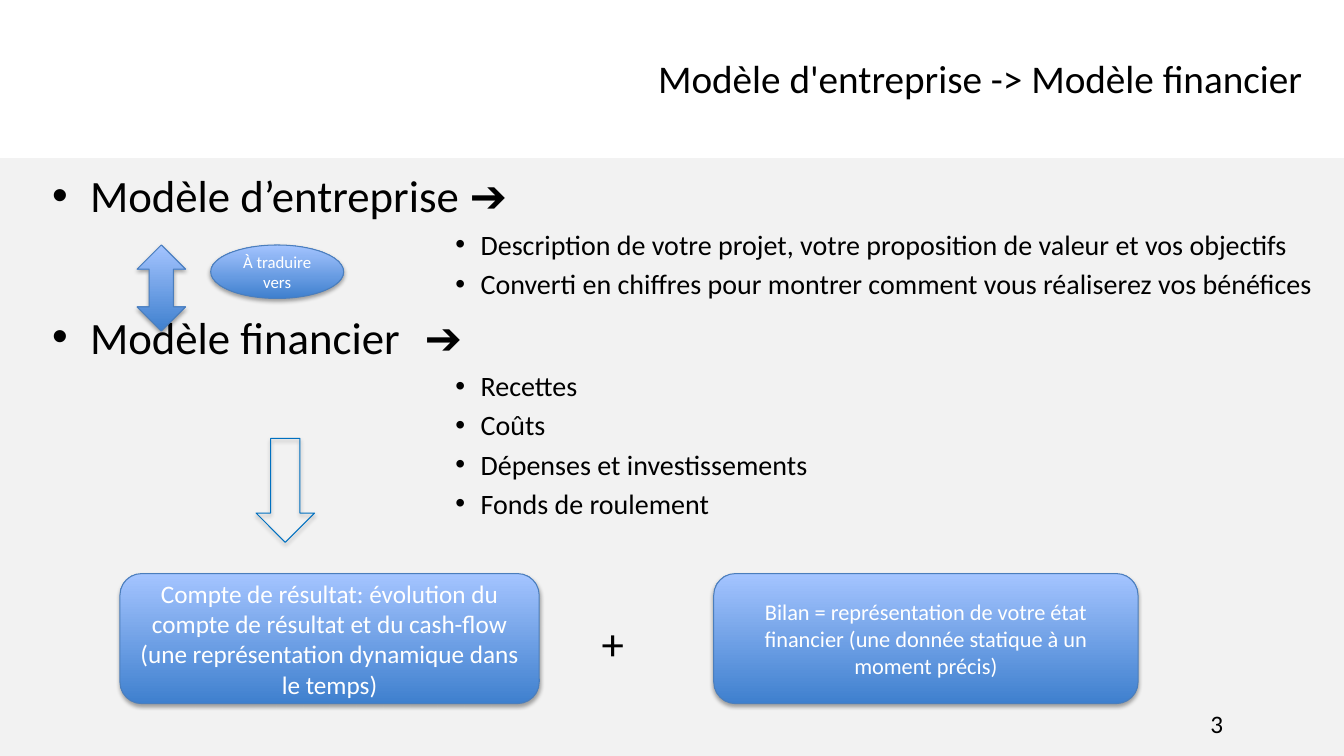
import lxml.etree
import pptx
import pptx.dml.color
import pptx.enum.shapes
import pptx.enum.text
import pptx.oxml.ns
import pptx.util

Pt = pptx.util.Pt
qn = pptx.oxml.ns.qn
SHAPE = pptx.enum.shapes.MSO_SHAPE
COLORS = {
    "panel": "F2F2F2",
    "text": "000000",
    "light_text": "FFFFFF",
    "gradient_bottom": "3F80CE",
    "gradient_top": "A4C4FF",
    "edge": "4B7EBC",
    "arrow_edge": "0070C0",
    "shadow": "000000",
}


def rgb(name):
    return pptx.dml.color.RGBColor.from_string(COLORS[name])


def add_run(paragraph, text, size, color="text"):
    run = paragraph.add_run()
    run.text = text
    run.font.name = "Calibri"
    run.font.size = Pt(size)
    run.font.color.rgb = rgb(color)


deck = pptx.Presentation()
deck.slide_width, deck.slide_height = Pt(960), Pt(540)
slide = deck.slides.add_slide(deck.slide_layouts[6])

# Grey panel below the title band
panel = slide.shapes.add_shape(SHAPE.RECTANGLE, 0, Pt(113), Pt(960), Pt(427))
panel.shadow.inherit = False
panel.fill.solid()
panel.fill.fore_color.rgb = rgb("panel")
panel.line.fill.background()

# Outline: text, level
outline = [
    ("Modèle d’entreprise ➔", "model"),
    ("Description de votre projet, votre proposition de valeur et vos objectifs", "detail"),
    ("Converti en chiffres pour montrer comment vous réaliserez vos bénéfices", "detail"),
    ("Modèle financier\t➔", "model"),
    ("Recettes", "detail"),
    ("Coûts", "detail"),
    ("Dépenses et investissements", "detail"),
    ("Fonds de roulement", "detail"),
]
# Level: size, left margin, hanging indent
levels = {"model": (32, 27, 27), "detail": (20, 306, 18)}
body = slide.shapes.add_textbox(Pt(30.2), Pt(116.6), Pt(929.8), Pt(414.7)).text_frame
body.word_wrap = True
for index, (text, level) in enumerate(outline):
    size, margin, hanging = levels[level]
    item = body.add_paragraph() if index else body.paragraphs[0]
    properties = item._p.get_or_add_pPr()
    properties.set("marL", str(Pt(margin)))
    properties.set("indent", str(-Pt(hanging)))
    lxml.etree.SubElement(properties, qn("a:buFont")).set("typeface", "Arial")
    lxml.etree.SubElement(properties, qn("a:buChar")).set("char", "•")
    if "\t" in text:
        tabs = lxml.etree.SubElement(properties, qn("a:tabLst"))
        tab = lxml.etree.SubElement(tabs, qn("a:tab"))
        tab.set("pos", str(Pt(266)))
        tab.set("algn", "l")
    if index:
        item.space_before = Pt(size * 0.2)
    add_run(item, text, size)

# Page number, title and plus sign: text, size, box, left inset
labels = [
    ("3", 18, (857.5, 502.6, 51, 29), 7.2),
    ("Modèle d'entreprise -> Modèle financier", 28, (463, 35.3, 489, 41), 7.2),
    ("+", 32, (408.2, 436.3, 45.4, 46), 21.6),
]
for text, size, box, inset in labels:
    label = slide.shapes.add_textbox(*map(Pt, box)).text_frame
    label.word_wrap = True
    label.margin_left = Pt(inset)
    add_run(label.paragraphs[0], text, size)

# Arrows, bubble and statement boxes: preset, box, text, size, filled
income = ("Compte de résultat: évolution du compte de résultat et du cash-flow "
          "(une représentation dynamique dans le temps)")
balance = ("Bilan = représentation de votre état financier "
           "(une donnée statique à un moment précis)")
figures = [
    (SHAPE.UP_DOWN_ARROW, (97.9, 175, 34.6, 61.5), "", 12, True),
    (SHAPE.OVAL, (150.5, 175, 95, 38.2), "À traduire vers", 12, True),
    (SHAPE.DOWN_ARROW, (182.9, 313.2, 41.8, 74.2), "", 12, False),
    (SHAPE.ROUNDED_RECTANGLE, (85.7, 409.7, 299.5, 92.9), income, 18, True),
    (SHAPE.ROUNDED_RECTANGLE, (509.8, 409.7, 303.1, 92.9), balance, 16, True),
]
for preset, box, text, size, filled in figures:
    figure = slide.shapes.add_shape(preset, *map(Pt, box))
    figure.line.width = Pt(0.75)
    figure.line.color.rgb = rgb("edge" if filled else "arrow_edge")
    if filled:
        figure.fill.gradient()
        figure.fill.gradient_angle = 90
        for stop, color in zip(figure.fill.gradient_stops, ("gradient_bottom", "gradient_top")):
            stop.color.rgb = rgb(color)
    else:
        figure.fill.background()

    # Soft shadow straight below
    figure.shadow.inherit = False
    effects = figure._element.spPr.find(qn("a:effectLst"))
    shadow = lxml.etree.SubElement(effects, qn("a:outerShdw"))
    for key, value in (("blurRad", Pt(3.1)), ("dist", Pt(1.8)), ("dir", 5400000), ("rotWithShape", 0)):
        shadow.set(key, str(value))
    tint = lxml.etree.SubElement(shadow, qn("a:srgbClr"))
    tint.set("val", COLORS["shadow"])
    lxml.etree.SubElement(tint, qn("a:alpha")).set("val", "35000")

    if text:
        figure.text_frame.word_wrap = True
        figure.text_frame.vertical_anchor = pptx.enum.text.MSO_ANCHOR.MIDDLE
        caption = figure.text_frame.paragraphs[0]
        caption.alignment = pptx.enum.text.PP_ALIGN.CENTER
        add_run(caption, text, size, "light_text")

deck.save("out.pptx")
